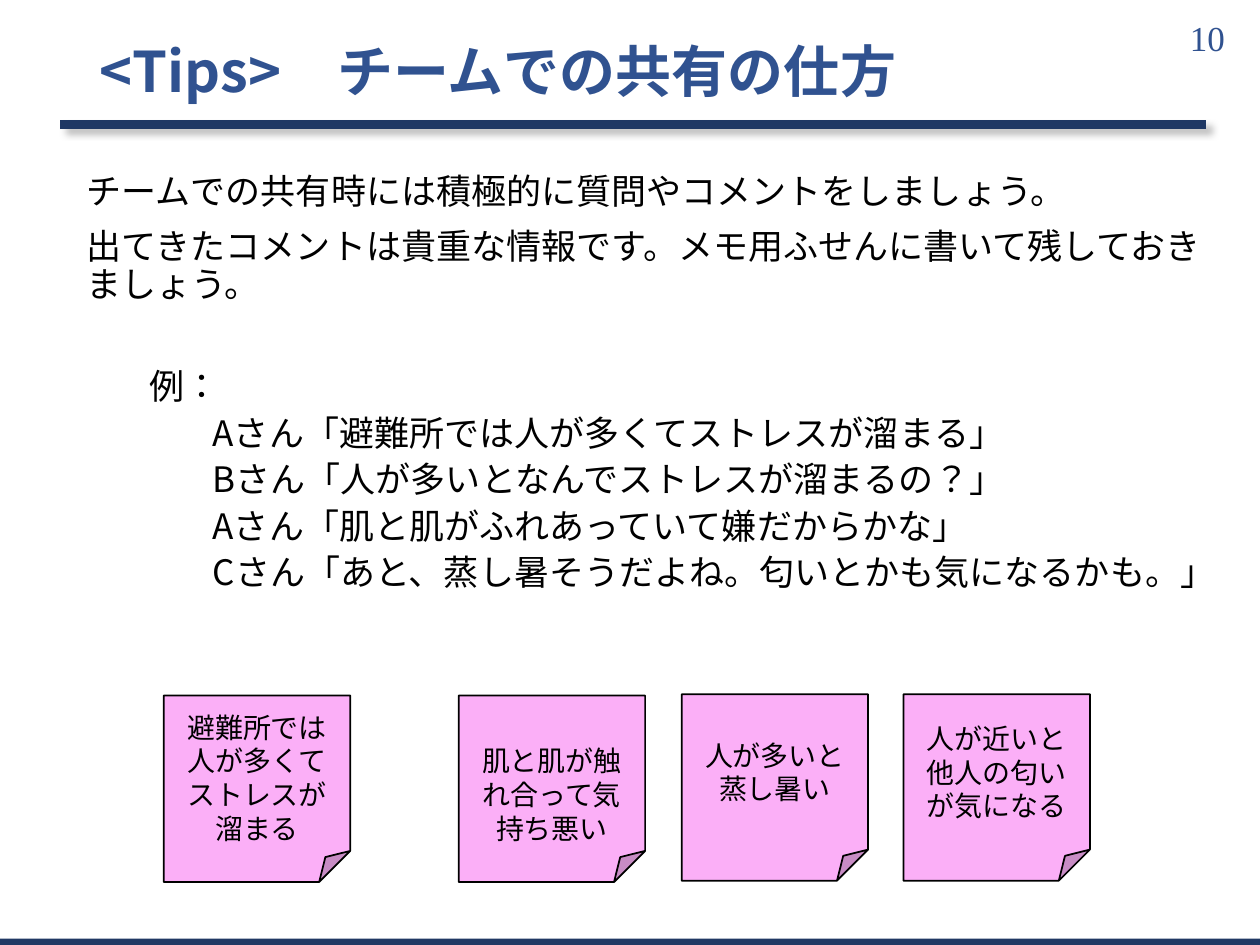
from lxml.etree import SubElement
from pptx import Presentation
from pptx.dml.color import RGBColor
from pptx.enum.lang import MSO_LANGUAGE_ID
from pptx.enum.shapes import MSO_CONNECTOR, MSO_SHAPE
from pptx.enum.text import MSO_ANCHOR, MSO_AUTO_SIZE, PP_ALIGN
from pptx.oxml import parse_xml
from pptx.oxml.ns import nsdecls, qn
from pptx.util import Inches, Pt

BLUE = RGBColor(0x30, 0x52, 0x90)
NAVY = RGBColor(0x1F, 0x38, 0x64)
BAR = RGBColor(0x21, 0x39, 0x64)
PINK = RGBColor(0xFB, 0xAF, 0xF7)
BLACK = RGBColor(0, 0, 0)
SANS = "Noto Sans CJK JP"
SERIF = "Times New Roman"

deck = Presentation()
deck.slide_width = Inches(10)
deck.slide_height = Inches(7.5)
COL = deck.slide_width / 100
ROW = deck.slide_height / 75
slide = deck.slides.add_slide(deck.slide_layouts[5])
shapes = slide.shapes


def grid(x, y, wide, high):
    return round(x * COL), round(y * ROW), round(wide * COL), round(high * ROW)


def write(frame, text, size=20, font=SANS, color=BLACK, bold=False, align=PP_ALIGN.LEFT,
          anchor=None, inset=0.05, indent=0, space=0, line=1.0, more=False):
    frame.word_wrap = True
    frame.auto_size = MSO_AUTO_SIZE.NONE
    frame.margin_left = frame.margin_right = Inches(0.1)
    frame.margin_top = frame.margin_bottom = Inches(inset)
    if anchor is not None:
        frame.vertical_anchor = anchor
    para = frame.add_paragraph() if more else frame.paragraphs[0]
    para.alignment = align
    para.line_spacing = line
    para.space_before = Pt(space)
    props = para._p.get_or_add_pPr()
    props.set("marL", str(round(indent * COL)))
    props.set("indent", "0")
    run = para.add_run()
    run.text = text
    run.font.size = Pt(size)
    run.font.name = font
    run.font.bold = bold
    run.font.color.rgb = color
    run.font.language_id = MSO_LANGUAGE_ID.JAPANESE
    SubElement(run._r.get_or_add_rPr(), qn("a:ea")).set("typeface", font)


page = shapes.add_textbox(*grid(92.1, 1, 6.1, 4))
write(page.text_frame, "10", font=SERIF, color=BLUE, align=PP_ALIGN.RIGHT, anchor=MSO_ANCHOR.MIDDLE)

left, top, wide, high = grid(4.8, 9.9, 90.9, 0)
rule = shapes.add_connector(MSO_CONNECTOR.STRAIGHT, left, top, left + wide, top)
rule.line.color.rgb = NAVY
rule.line.width = Pt(5)
rule._element.spPr.append(parse_xml(
    f'<a:effectLst {nsdecls("a")}><a:outerShdw blurRad="50800" dist="50800" dir="2700000">'
    '<a:srgbClr val="000000"><a:alpha val="25000"/></a:srgbClr>'
    '</a:outerShdw></a:effectLst>'))

foot = shapes.add_shape(MSO_SHAPE.RECTANGLE, *grid(0, 74.5, 100, 0.5))
foot.shadow.inherit = False
foot.fill.solid()
foot.fill.fore_color.rgb = BAR
foot.line.fill.background()

title = shapes.title
title.left, title.top, title.width, title.height = grid(6.9, 1.9, 86.2, 8)
write(title.text_frame, "<Tips>　チームでの共有の仕方", size=32, color=BLUE, bold=True,
      anchor=MSO_ANCHOR.MIDDLE, inset=0, line=0.9)

lines = [
    ("チームでの共有時には積極的に質問やコメントをしましょう。", 1.1, 0),
    ("出てきたコメントは貴重な情報です。メモ用ふせんに書いて残しておきましょう。", 1.1, 10),
    ("例：", 6.1, 37),
    ("Aさん「避難所では人が多くてストレスが溜まる」", 11.1, 5),
    ("Bさん「人が多いとなんでストレスが溜まるの？」", 11.1, 5),
    ("Aさん「肌と肌がふれあっていて嫌だからかな」", 11.1, 5),
    ("Cさん「あと、蒸し暑そうだよね。匂いとかも気になるかも。」", 11.1, 5),
]
body = shapes.add_textbox(*grid(4.8, 13.3, 93, 60.2))
for order, (text, indent, space) in enumerate(lines):
    write(body.text_frame, text, indent=indent, space=space, line=0.9, more=order > 0)

notes = [
    ("避難所では人が多くてストレスが溜まる", 13, 55.2, MSO_ANCHOR.BOTTOM),
    ("肌と肌が触れ合って気持ち悪い", 36.4, 55.2, MSO_ANCHOR.BOTTOM),
    ("人が多いと蒸し暑い", 54.1, 55.1, MSO_ANCHOR.MIDDLE),
    ("人が近いと他人の匂いが気になる", 71.7, 55.1, MSO_ANCHOR.MIDDLE),
]
for text, x, y, anchor in notes:
    note = shapes.add_shape(MSO_SHAPE.FOLDED_CORNER, *grid(x, y, 14.8, 14.8))
    note.shadow.inherit = False
    note.fill.solid()
    note.fill.fore_color.rgb = PINK
    note.line.color.rgb = BLACK
    note.line.width = Pt(1)
    write(note.text_frame, text, size=16, align=PP_ALIGN.CENTER, anchor=anchor)

deck.save("out.pptx")
